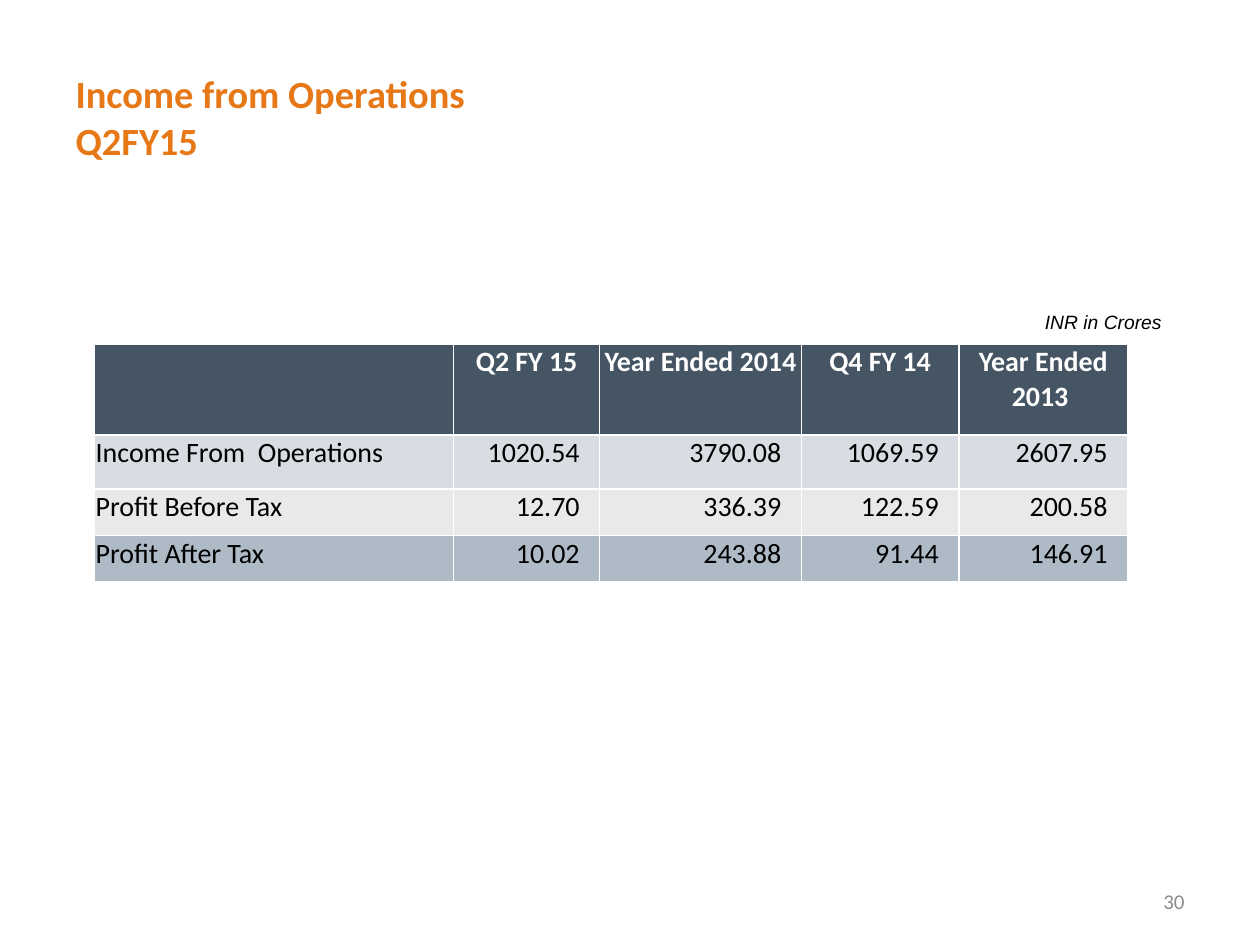
from lxml import etree
from pptx import Presentation
from pptx.dml.color import RGBColor
from pptx.enum.text import MSO_ANCHOR, PP_ALIGN
from pptx.oxml.ns import qn
from pptx.util import Inches, Pt

LEFT, CENTER, RIGHT = PP_ALIGN.LEFT, PP_ALIGN.CENTER, PP_ALIGN.RIGHT
MIDDLE = MSO_ANCHOR.MIDDLE

ORANGE = RGBColor(0xE7, 0x78, 0x17)
GRAY = RGBColor(0x8C, 0x8C, 0x8C)
BLACK = RGBColor(0x00, 0x00, 0x00)
WHITE = RGBColor(0xFF, 0xFF, 0xFF)
SLATE = RGBColor(0x45, 0x55, 0x63)
PALE_BLUE = RGBColor(0xD7, 0xDD, 0xE3)
PALE_GRAY = RGBColor(0xE9, 0xE9, 0xEA)
STEEL = RGBColor(0xAE, 0xBB, 0xC7)


def write(frame, text, size=16, color=BLACK, align=LEFT, name="Calibri", bold=False, italic=False):
    paragraph = frame.paragraphs[0]
    paragraph.text = text
    paragraph.alignment = align
    for font in [paragraph.font] + [run.font for run in paragraph.runs]:
        font.name, font.size, font.bold, font.italic = name, Pt(size), bold, italic
        font.color.rgb = color


def add_borders(cell, widths):
    properties = cell._tc.get_or_add_tcPr()
    for side, width in widths.items():
        line = etree.SubElement(properties, qn("a:ln" + side), w=str(Pt(width)))
        fill = etree.SubElement(line, qn("a:solidFill"))
        etree.SubElement(fill, qn("a:srgbClr"), val=str(WHITE))


prs = Presentation()
prs.slide_width, prs.slide_height = Inches(10), Inches(7.5)
slide = prs.slides.add_slide(prs.slide_layouts[5])

# Title
title = slide.shapes.title
title.left, title.top, title.width, title.height = map(Inches, (0.5, 0.3, 9, 1.25))
title.text_frame.vertical_anchor = MIDDLE
write(title.text_frame, "Income from Operations\vQ2FY15", size=22, color=ORANGE, bold=True)

# Page number
page_number = slide.shapes.add_textbox(Inches(7.17), Inches(6.95), Inches(2.33), Inches(0.4))
page_number.text_frame.word_wrap = True
page_number.text_frame.vertical_anchor = MIDDLE
write(page_number.text_frame, "30", size=12, color=GRAY, align=RIGHT)

# Unit note
unit_note = slide.shapes.add_textbox(Inches(7.99), Inches(2.41), Inches(1.33), Inches(0.29))
unit_note.text_frame.word_wrap = True
write(unit_note.text_frame, "INR in Crores", size=11, align=RIGHT, name="Arial", italic=True)

# Results table
results = [
    ["", "Q2 FY 15", "Year Ended 2014", "Q4 FY 14", "Year Ended 2013 "],
    ["Income From  Operations", "1020.54", "3790.08", "1069.59", "2607.95"],
    ["Profit Before Tax", "12.70", "336.39", "122.59", "200.58"],
    ["Profit After Tax", "10.02", "243.88", "91.44", "146.91"],
]
row_fills = [SLATE, PALE_BLUE, PALE_GRAY, STEEL]
row_heights = [0.72, 0.43, 0.37, 0.37]
column_widths = [2.85, 1.16, 1.6, 1.25, 1.34]

table = slide.shapes.add_table(
    len(results), len(column_widths), Inches(0.75), Inches(2.73),
    Inches(sum(column_widths)), Inches(sum(row_heights))).table
for column, width in zip(table.columns, column_widths):
    column.width = Inches(width)

for r, values in enumerate(results):
    table.rows[r].height = Inches(row_heights[r])
    is_header = r == 0
    for c, value in enumerate(values):
        cell = table.cell(r, c)
        is_figure = not is_header and c > 0
        cell.margin_left = cell.margin_top = Inches(0.01)
        cell.margin_right = Inches(0.16 if is_figure else 0.01)
        cell.margin_bottom = 0
        add_borders(cell, {"L": 1, "R": 1, "T": 1.5 if r < 2 and (r or c) else 1,
                           "B": 1.5 if is_header else 1})
        cell.fill.solid()
        cell.fill.fore_color.rgb = row_fills[r]
        write(cell.text_frame, value, color=WHITE if is_header else BLACK, bold=is_header,
              align=CENTER if is_header else RIGHT if is_figure else LEFT)

prs.save("out.pptx")
